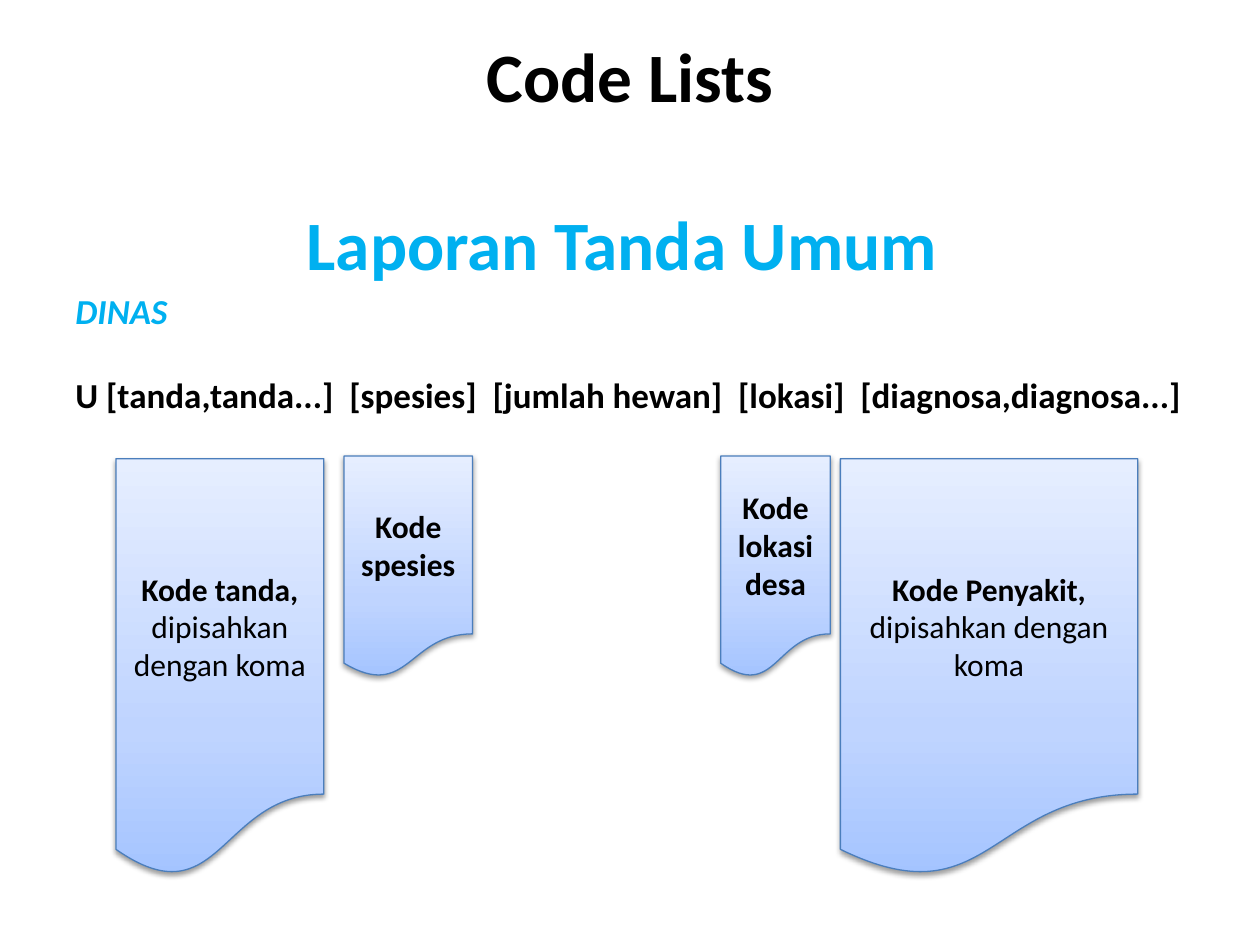
from dataclasses import dataclass

from lxml import etree
from pptx import Presentation
from pptx.dml.color import RGBColor
from pptx.enum.shapes import MSO_SHAPE
from pptx.enum.text import MSO_ANCHOR, MSO_AUTO_SIZE, PP_ALIGN
from pptx.oxml.ns import qn
from pptx.util import Inches, Pt

DOCUMENT = MSO_SHAPE.FLOWCHART_DOCUMENT
MIDDLE = MSO_ANCHOR.MIDDLE
CENTER = PP_ALIGN.CENTER
LEFT = PP_ALIGN.LEFT
NO_AUTOFIT = MSO_AUTO_SIZE.NONE
FIT_SHAPE = MSO_AUTO_SIZE.SHAPE_TO_FIT_TEXT
FONT = "Calibri"
BLACK = "000000"
CYAN = "00B0F0"
OUTLINE = "4B7EBC"
GRADIENT = ((0, "A4C4FF"), (35, "BFD4FF"), (100, "E6EEFF"))
TALL_TOP, TALL_HEIGHT = 3.64, 3.32
SHORT_TOP, SHORT_HEIGHT = 3.62, 1.76


@dataclass(frozen=True)
class Span:
    text: str
    size: float = 18
    color: str = BLACK
    bold: bool = True
    italic: bool = False


@dataclass(frozen=True)
class CodeCard:
    left: float
    top: float
    width: float
    height: float
    paras: tuple[tuple[Span, ...], ...]


SEPARATED = Span("dipisahkan dengan koma", bold=False)
CARDS = (
    CodeCard(0.92, TALL_TOP, 1.65, TALL_HEIGHT, ((Span("Kode tanda, "), SEPARATED),)),
    CodeCard(2.73, SHORT_TOP, 1.02, SHORT_HEIGHT, ((Span("Kode spesies"),),)),
    CodeCard(6.67, TALL_TOP, 2.36, TALL_HEIGHT, ((Span("Kode Penyakit, "), SEPARATED),)),
    CodeCard(5.72, SHORT_TOP, 0.87, SHORT_HEIGHT, ((Span("Kode lokasi"),), (Span("desa"),))),
)


def rgb(color: str) -> RGBColor:
    return RGBColor.from_string(color)


def place(shape, left: float, top: float, width: float, height: float) -> None:
    shape.left, shape.top = Inches(left), Inches(top)
    shape.width, shape.height = Inches(width), Inches(height)


def write(frame, paras: tuple[tuple[Span, ...], ...], align, gap: float = 0) -> None:
    frame.word_wrap = True
    for index, spans in enumerate(paras):
        para = frame.add_paragraph() if index else frame.paragraphs[0]
        para.alignment = align
        para.space_before = Pt(gap if index else 0)
        for span in spans:
            run = para.add_run()
            run.text = span.text
            font = run.font
            font.name, font.size = FONT, Pt(span.size)
            font.bold, font.italic = span.bold, span.italic
            font.color.rgb = rgb(span.color)


def add_color(parent, color: str):
    return etree.SubElement(parent, qn("a:srgbClr"), val=color)


def set_gradient(shape) -> None:
    shape.fill.gradient()
    shape.fill.gradient_angle = 90
    stops = shape._element.spPr.find(".//" + qn("a:gsLst"))
    for stop in list(stops):
        stops.remove(stop)
    for position, color in GRADIENT:
        add_color(etree.SubElement(stops, qn("a:gs"), pos=str(position * 1000)), color)


def set_shadow(shape) -> None:
    shape.shadow.inherit = False
    effects = shape._element.spPr.find(qn("a:effectLst"))
    shadow = etree.SubElement(
        effects, qn("a:outerShdw"), blurRad=str(Pt(3.1)), dist=str(Pt(1.6)),
        dir="5400000", rotWithShape="0",
    )
    etree.SubElement(add_color(shadow, BLACK), qn("a:alpha"), val="38000")


def add_card(shapes, card: CodeCard) -> None:
    shape = shapes.add_shape(
        DOCUMENT, Inches(card.left), Inches(card.top), Inches(card.width), Inches(card.height)
    )
    set_gradient(shape)
    shape.line.color.rgb = rgb(OUTLINE)
    shape.line.width = Pt(0.75)
    set_shadow(shape)
    shape.text_frame.vertical_anchor = MIDDLE
    write(shape.text_frame, card.paras, CENTER)


def add_title(page) -> None:
    title = page.shapes.title
    place(title, 0.5, 0.3, 9, 1.25)
    frame = title.text_frame
    frame.auto_size = NO_AUTOFIT
    frame.vertical_anchor = MIDDLE
    frame.margin_top = Inches(0.72)
    paras = ((Span("Code Lists", 39.6),), (Span("Laporan Tanda Umum ", 39.6, CYAN),))
    write(frame, paras, CENTER, gap=48)


def add_format_line(page) -> None:
    box = page.shapes.add_textbox(Inches(0.5), Inches(2.25), Inches(9.21), Inches(1.11))
    box.text_frame.auto_size = FIT_SHAPE
    pattern = "U [tanda,tanda...]  [spesies]  [jumlah hewan]  [lokasi]  [diagnosa,diagnosa...]"
    paras = ((Span("DINAS", 20, CYAN, italic=True),), (Span(pattern, 20),))
    write(box.text_frame, paras, LEFT, gap=24)


def main() -> None:
    deck = Presentation()
    deck.slide_width, deck.slide_height = Inches(10), Inches(7.5)
    page = deck.slides.add_slide(deck.slide_layouts[5])
    add_title(page)
    add_format_line(page)
    group = page.shapes.add_group_shape()
    for card in CARDS:
        add_card(group.shapes, card)
    deck.save("out.pptx")


if __name__ == "__main__":
    main()
